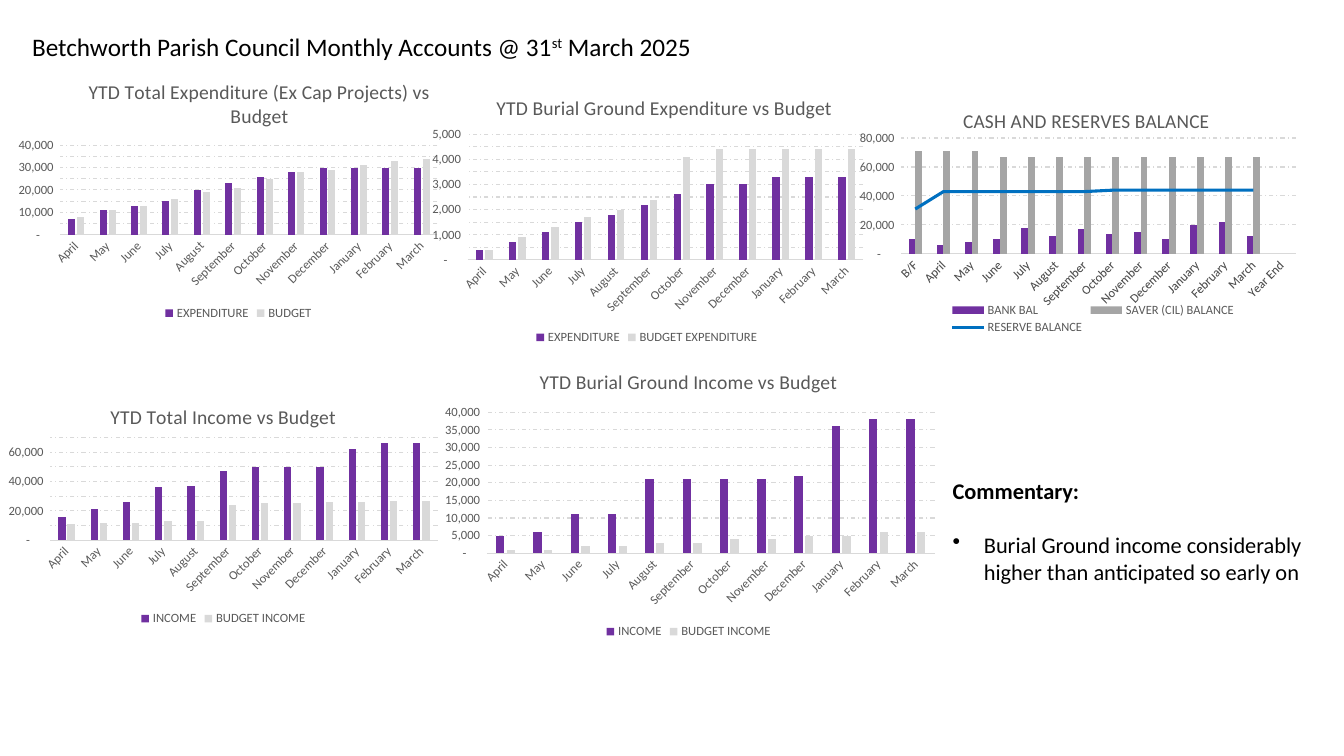
from lxml import etree
from pptx import Presentation
from pptx.chart.data import CategoryChartData
from pptx.dml.color import RGBColor
from pptx.enum.chart import XL_CHART_TYPE as CT, XL_LEGEND_POSITION as LP
from pptx.enum.chart import XL_MARKER_STYLE as MS, XL_TICK_MARK as TM
from pptx.enum.dml import MSO_LINE
from pptx.oxml import parse_xml
from pptx.oxml.ns import nsdecls, qn
from pptx.util import Inches, Pt

MONTHS = ["April", "May", "June", "July", "August", "September", "October",
          "November", "December", "January", "February", "March"]
PURPLE, PALE, GREY, BLUE = "7030A0", "D9D9D9", "A5A5A5", "0070C0"
TEXT, BLACK = "595959", "000000"
NUMBERS = '_-* #,##0_-;\\-* #,##0_-;_-* "-"??_-;_-@_'

HEADING = [("Betchworth Parish Council Monthly Accounts @ 31", None),
           ("st", "30000"), (" March 2025", None)]
COMMENTARY = ["Commentary:",
              "Burial Ground income considerably higher than anticipated so early on"]

CHARTS = [
    {"title": "YTD Total Expenditure (Ex Cap Projects) vs Budget",
     "box": (0.06, 0.64, 4.61, 2.58), "plot": (0.6, 1.44, 3.74, 0.89),
     "title_at": (0.17, 0.04), "scale": (40000, 5000), "cats": MONTHS,
     "series": [
         ("EXPENDITURE", PURPLE, [7000, 11000, 13000, 15000, 20000, 23000, 26000,
                                  28000, 30000, 30000, 30000, 30000]),
         ("BUDGET", PALE, [8000, 11000, 13000, 16000, 19000, 21000, 25000,
                           28000, 29000, 31000, 33000, 34000])]},
    {"title": "YTD Burial Ground Expenditure vs Budget",
     "box": (4.17, 0.76, 4.49, 2.7), "plot": (4.64, 1.33, 3.92, 1.25),
     "title_at": (0.16, 0.05), "scale": (5000, 500), "cats": MONTHS,
     "series": [
         ("EXPENDITURE", PURPLE, [400, 700, 1100, 1500, 1800, 2200, 2600,
                                  3000, 3000, 3300, 3300, 3300]),
         ("BUDGET EXPENDITURE", PALE, [400, 900, 1300, 1700, 2000, 2400, 4100,
                                       4400, 4400, 4400, 4400, 4400])]},
    {"title": "CASH AND RESERVES BALANCE",
     "box": (8.5, 0.93, 4.49, 2.44), "plot": (8.88, 1.37, 3.97, 1.15),
     "legend_at": (0.19, 0.84, 0.65, 0.15), "scale": (80000, 20000),
     "cats": ["B/F"] + MONTHS + ["Year End"], "overlap": 0,
     "series": [
         ("BANK BAL", PURPLE, [10000, 6000, 8000, 10000, 18000, 12000, 17000, 14000,
                               15000, 10000, 20000, 22000, 12000, None]),
         ("SAVER (CIL) BALANCE", GREY, [71000] * 3 + [67000] * 10 + [None]),
         ("RESERVE BALANCE", BLUE, [31000] + [43000] * 6 + [44000] * 6 + [None])],
     "line": 2},
    {"title": "YTD Total Income vs Budget",
     "box": (-0.03, 3.86, 4.49, 2.39), "plot": (0.5, 4.34, 3.84, 1.02),
     "scale": (70000, 10000), "cats": MONTHS,
     "series": [
         ("INCOME", PURPLE, [16000, 21000, 26000, 36000, 37000, 47000, 50000,
                             50000, 50000, 62000, 66000, 66000]),
         ("BUDGET INCOME", PALE, [11000, 12000, 12000, 13000, 13000, 24000, 25000,
                                  25000, 26000, 26000, 27000, 27000])]},
    {"title": "YTD Burial Ground Income vs Budget",
     "box": (4.3, 3.51, 5.06, 2.87), "plot": (4.83, 4.09, 4.44, 1.4),
     "scale": (40000, 5000), "cats": MONTHS,
     "series": [
         ("INCOME", PURPLE, [5000, 6000, 11000, 11000, 21000, 21000, 21000,
                             21000, 22000, 36000, 38000, 38000]),
         ("BUDGET INCOME", PALE, [1000, 1000, 2000, 2000, 3000, 3000, 4000,
                                  4000, 5000, 5000, 6000, 6000])]},
]


def rgb(value):
    return RGBColor.from_string(value)


def set_font(font, size, color, bold=False):
    for name, value in {"name": "Calibri", "size": Pt(size), "bold": bold}.items():
        setattr(font, name, value)
    font.color.rgb = rgb(color)


def set_line(line, color, width, dash=None):
    line.color.rgb, line.width = rgb(color), Pt(width)
    if dash:
        line.dash_style = dash


def place(parent, index, values, inner=False):
    for old in parent.findall(qn("c:layout")):
        parent.remove(old)
    tags = [("layoutTarget", "inner")] if inner else []
    tags += [("xMode", "edge"), ("yMode", "edge")]
    tags += [(tag, f"{value:.4f}") for tag, value in zip("xywh", values)]
    body = "".join(f'<c:{tag} val="{value}"/>' for tag, value in tags)
    parent.insert(index, parse_xml(
        f'<c:layout {nsdecls("c")}><c:manualLayout>{body}</c:manualLayout></c:layout>'))


def move_to_line(chart, index):
    bars = chart.plots[0]._element
    ser = bars.findall(qn("c:ser"))[index]
    for old in ser.findall(qn("c:invertIfNegative")):
        ser.remove(old)
    lines = parse_xml(f'<c:lineChart {nsdecls("c")}><c:grouping val="standard"/>'
                      '<c:varyColors val="0"/></c:lineChart>')
    lines.append(ser)
    etree.SubElement(lines, qn("c:marker")).set("val", "1")
    for axis in bars.findall(qn("c:axId")):
        etree.SubElement(lines, qn("c:axId")).set("val", axis.get("val"))
    bars.addnext(lines)


def add_column_chart(s, item):
    data = CategoryChartData()
    data.categories = item["cats"]
    for name, _, values in item["series"]:
        data.add_series(name, values)
    box = item["box"]
    chart = s.shapes.add_chart(CT.COLUMN_CLUSTERED, *map(Inches, box), data).chart
    set_font(chart.font, 10, BLACK)

    tf = chart.chart_title.text_frame
    tf.text = item["title"]
    set_font(tf.paragraphs[0].runs[0].font, 14, TEXT)
    chart.chart_title.include_in_layout = False
    if "title_at" in item:
        place(chart.chart_title._element, 1, item["title_at"])

    chart.has_legend = True
    legend = chart.legend
    legend.position, legend.include_in_layout = LP.BOTTOM, False
    set_font(legend.font, 9, TEXT)
    if "legend_at" in item:
        place(legend._element, 1, item["legend_at"])

    cat, val = chart.category_axis, chart.value_axis
    for axis in (cat, val):
        axis.major_tick_mark = axis.minor_tick_mark = TM.NONE
        set_font(axis.tick_labels.font, 9, TEXT)
    set_line(cat.format.line, PALE, 0.75)
    cat._element.find(qn("c:txPr")).find(qn("a:bodyPr")).set("rot", "-2700000")
    val.format.line.fill.background()
    set_line(val.major_gridlines.format.line, PALE, 0.75, MSO_LINE.DASH_DOT)
    val.minimum_scale = 0
    val.maximum_scale, val.major_unit = item["scale"]
    val.tick_labels.number_format = NUMBERS
    val.tick_labels.number_format_is_linked = False

    plot = chart.plots[0]
    plot.gap_width, plot.overlap = 219, item.get("overlap", -27)
    plot.vary_by_categories = False
    if "line" in item:
        move_to_line(chart, item["line"])
        reserve = chart.plots[1].series[0]
        reserve.smooth, reserve.marker.style = False, MS.NONE
        set_line(reserve.format.line, item["series"][item["line"]][1], 2.25)
    for ser, (_, color, _) in zip(plot.series, item["series"]):
        ser.format.fill.solid()
        ser.format.fill.fore_color.rgb = rgb(color)

    x, y, w, h = item["plot"]
    left, top, width, height = box
    place(chart._chartSpace.chart.plotArea, 0,
          ((x - left) / width, (y - top) / height, w / width, h / height), True)


def add_text_box(s, *box):
    tf = s.shapes.add_textbox(*map(Inches, box)).text_frame
    tf.word_wrap = True
    return tf


def main():
    """Build the monthly accounts slide."""
    prs = Presentation()
    prs.slide_width, prs.slide_height = Inches(13.33), Inches(7.5)
    s = prs.slides.add_slide(prs.slide_layouts[6])

    p = add_text_box(s, 0.22, 0.26, 9.3, 0.71).paragraphs[0]
    for text, baseline in HEADING:
        r = p.add_run()
        r.text = text
        set_font(r.font, 18, BLACK)
        if baseline:
            r._r.get_or_add_rPr().set("baseline", baseline)

    tf = add_text_box(s, 9.35, 4.68, 3.88, 1.45)
    tf.text = "\n".join(COMMENTARY)
    label, point = tf.paragraphs
    pPr = point._p.get_or_add_pPr()
    pPr.set("marL", str(Inches(0.31)))
    pPr.set("indent", str(Inches(-0.31)))
    etree.SubElement(pPr, qn("a:buChar")).set("char", "•")
    point.space_before = Pt(19.5)
    for p in (label, point):
        set_font(p.runs[0].font, 16, BLACK, p is label)

    for item in CHARTS:
        add_column_chart(s, item)
    prs.save("out.pptx")


if __name__ == "__main__":
    main()
